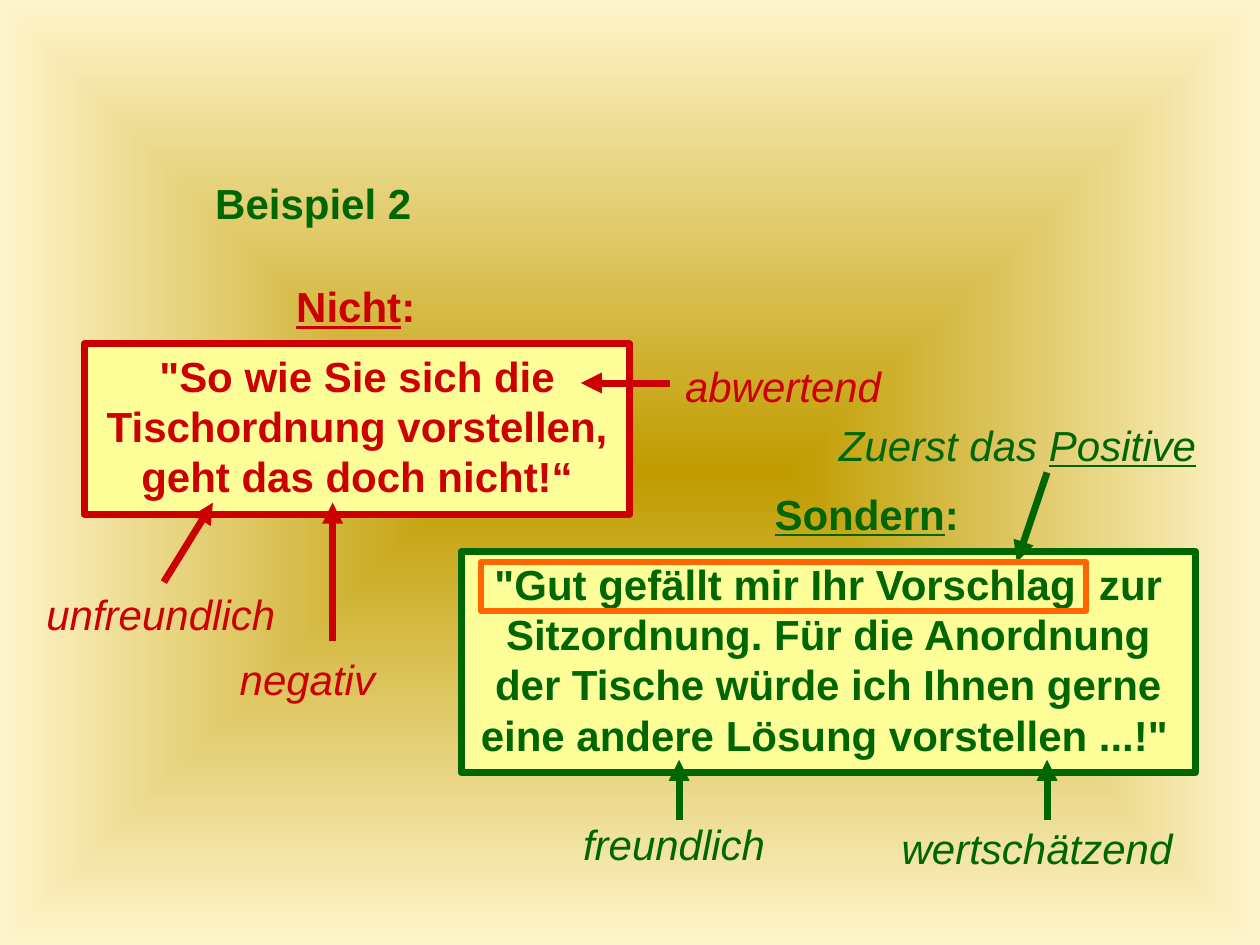
from lxml import etree
from pptx import Presentation
from pptx.dml.color import RGBColor
from pptx.enum.shapes import MSO_CONNECTOR, MSO_SHAPE
from pptx.enum.text import MSO_ANCHOR, PP_ALIGN
from pptx.oxml.ns import qn
from pptx.util import Inches, Pt

LEFT, CENTER = PP_ALIGN.LEFT, PP_ALIGN.CENTER
RECT, STRAIGHT, TOP = MSO_SHAPE.RECTANGLE, MSO_CONNECTOR.STRAIGHT, MSO_ANCHOR.TOP
COLORS = {"bad": "CC0000", "good": "006600", "paper": "FFFF99", "mark": "FF6600",
          "black": "000000", "center": "C09C00", "edge": "FFF5CC"}

# The slide is a grid of 100 columns by 75 rows
SLIDE_W, SLIDE_H = Inches(10), Inches(7.5)
COL, ROW = SLIDE_W / 100, SLIDE_H / 75
LABEL_ROWS = 5


def rgb(name):
    return RGBColor.from_string(COLORS[name])


def place(box, left, top, width, height):
    """Convert grid lengths, counted from the corner of box, to slide lengths."""
    return (round((box[0] + left) * COL), round((box[1] + top) * ROW),
            round(width * COL), round(height * ROW))


def write(sp, runs, color, align=CENTER):
    """Fill a shape with one paragraph of (text, font settings) runs."""
    tf = sp.text_frame
    tf.word_wrap = True
    tf.vertical_anchor = TOP
    p = tf.paragraphs[0]
    p.alignment = align
    for text, settings in runs:
        r = p.add_run()
        r.text = text
        r.font.name, r.font.size = "Arial", Pt(24)
        r.font.color.rgb = rgb(color)
        for key, value in settings.items():
            setattr(r.font, key, value)


def add_label(s, box, at, runs, color, align=CENTER):
    sp = s.shapes.add_textbox(*place(box, *at, LABEL_ROWS))
    write(sp, runs, color, align)


def add_frame(s, box, at, color, width, fill=None):
    sp = s.shapes.add_shape(RECT, *place(box, *at))
    sp.shadow.inherit = False
    sp.line.color.rgb, sp.line.width = rgb(color), Pt(width)
    if fill:
        sp.fill.solid()
        sp.fill.fore_color.rgb = rgb(fill)
    else:
        sp.fill.background()
    return sp


def add_arrow(s, box, start, end, color):
    line = s.shapes.add_connector(STRAIGHT, *place(box, *start, 0, 0)[:2],
                                  *place(box, *end, 0, 0)[:2])
    line.line.color.rgb, line.line.width = rgb(color), Pt(4)
    ln = line.line._get_or_add_ln()
    etree.SubElement(ln, qn("a:tailEnd"), type="triangle")
    etree.SubElement(ln.getparent(), qn("a:effectLst"))


def add_example(s, box, color, heading, heading_at, quote, notes, arrows):
    """Draw a quote in a frame, its heading, and the notes pointing at it."""
    sp = add_frame(s, box, (0, 0, *box[2:]), color, 4, "paper")
    write(sp, quote, color)
    add_label(s, box, heading_at,
              [(heading, {"bold": True, "underline": True}), (": ", {"bold": True})], color)
    for at, align, runs in notes:
        add_label(s, box, at, runs, color, align)
    for start, end in arrows:
        add_arrow(s, box, start, end, color)


def add_background(s):
    """Spread a gradient from the middle of the slide to its edges."""
    fill = s.background.fill
    fill.gradient()
    for stop, name in zip(fill.gradient_stops, ("center", "edge")):
        stop.color.rgb = rgb(name)
    grad = s.element.find(".//" + qn("a:gradFill"))
    grad.remove(grad.find(qn("a:lin")))
    shape_path = etree.SubElement(grad, qn("a:path"), {"path": "shape"})
    etree.SubElement(shape_path, qn("a:fillToRect"), dict.fromkeys("ltrb", "50000"))


def main():
    prs = Presentation()
    prs.slide_width, prs.slide_height = SLIDE_W, SLIDE_H
    s = prs.slides.add_slide(prs.slide_layouts[6])
    add_background(s)
    bold, italic = {"bold": True}, {"italic": True}

    add_label(s, (0, 0), (16.1, 13.6, 21.3), [("Beispiel 2", bold)], "good", LEFT)

    add_example(
        s, (6.7, 27.3, 43.3, 13.5), "bad", "Nicht", (15.7, -5.5, 12.6),
        [('"So wie Sie sich die Tischordnung vorstellen, geht das doch nicht!“', bold)],
        [((-4, 18.9, 22.8), LEFT, [("unfreundlich", italic)]),
         ((46.4, 0.8, 18.1), CENTER, [("abwertend", italic)]),
         ((5.5, 24.1, 24.4), CENTER, [("negativ", italic)])],
        [((6.3, 18.9), (10.2, 12.6)),
         ((19.7, 23.6), (19.7, 12.6)),
         ((46.5, 3.1), (39.4, 3.1))])

    good_box = (36.6, 43.8, 58.3, 17.5)
    add_example(
        s, good_box, "good", "Sondern", (23.6, -5.5, 18.1),
        [('"Gut gefällt mir Ihr Vorschlag  zur Sitzordnung. Für die Anordnung der Tische '
          'würde ich Ihnen gerne eine andere Lösung vorstellen ...!"', bold),
         (" ", {"name": "Roboto", "size": Pt(18)})],
        [((4.7, 20.7, 24.4), CENTER, [("freundlich", italic)]),
         ((32.3, 21, 26.8), CENTER, [("wertschätzend", italic)]),
         ((28.4, -11, 31.5), CENTER,
          [("Zuerst das ", italic), ("Positive", {"italic": True, "underline": True})])],
        [((17.3, 21.3), (17.3, 16.5)),
         ((46.5, 21.3), (46.5, 16.5)),
         ((46.5, -6.3), (44.1, 0.8))])
    add_frame(s, good_box, (1.6, 0.8, 48, 3.9), "mark", 3.5)

    prs.save("out.pptx")


if __name__ == "__main__":
    main()
